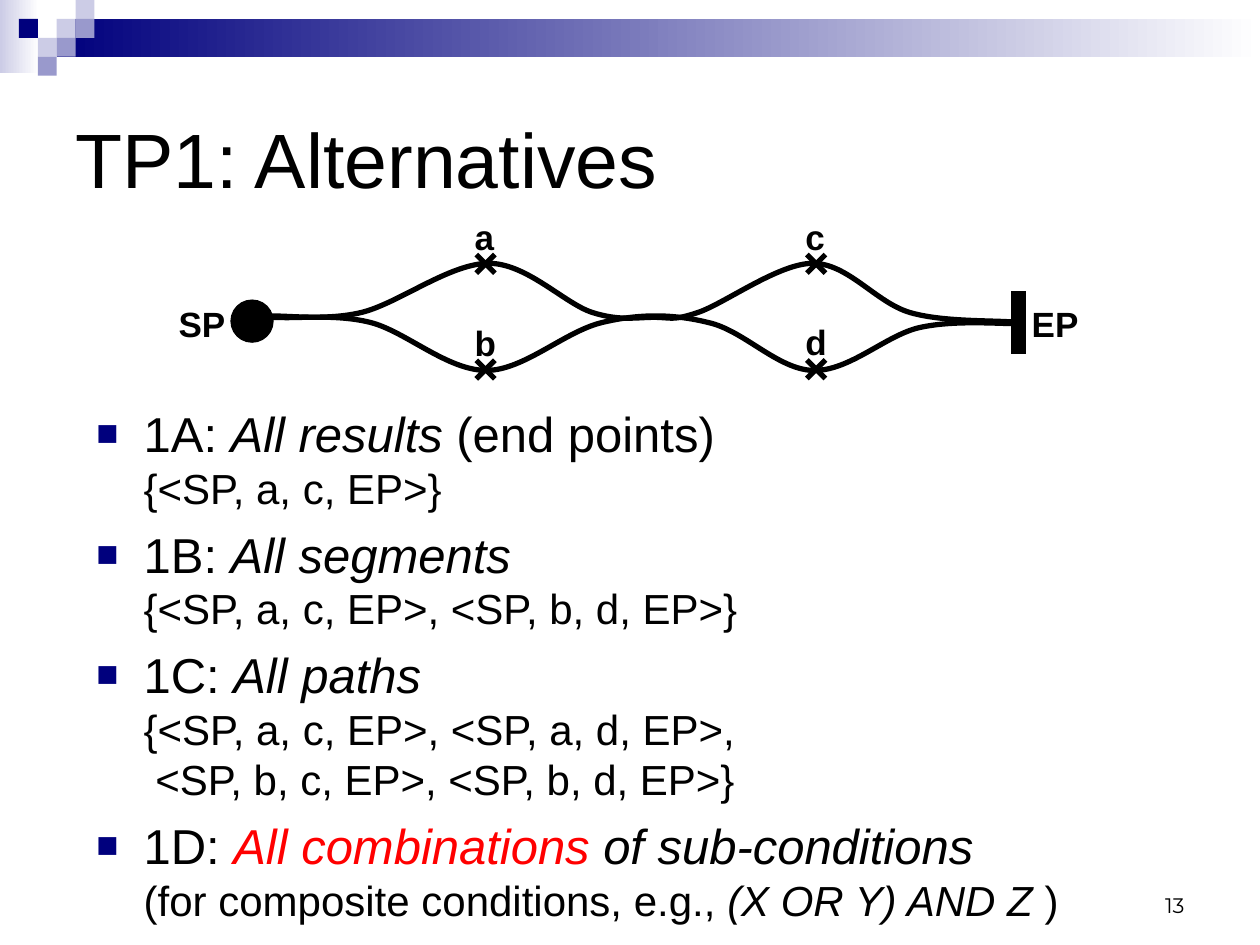
"""Build the slide "TP1: Alternatives" with its path diagram and test criteria."""
from lxml.etree import SubElement
from pptx import Presentation
from pptx.dml.color import RGBColor
from pptx.enum.shapes import MSO_CONNECTOR, MSO_SHAPE
from pptx.enum.text import MSO_ANCHOR, PP_ALIGN
from pptx.oxml.ns import qn
from pptx.util import Pt

BLACK = RGBColor(0x00, 0x00, 0x00)
WHITE = RGBColor(0xFF, 0xFF, 0xFF)
RED = RGBColor(0xFF, 0x00, 0x00)
NAVY = RGBColor(0x00, 0x00, 0x7D)
LILAC = RGBColor(0x99, 0x99, 0xCC)
PALE = RGBColor(0xCC, 0xCC, 0xE6)

TITLE = "TP1: Alternatives"
PAGE_NUMBER = "13"
HEADING, DETAIL = 28, 24
CRITERIA = [
    [[("1A: ", HEADING, False, BLACK), ("All results", HEADING, True, BLACK),
      (" (end points)", HEADING, False, BLACK)],
     [("{<SP, a, c, EP>}", DETAIL, False, BLACK)]],
    [[("1B: ", HEADING, False, BLACK), ("All segments", HEADING, True, BLACK)],
     [("{<SP, a, c, EP>, <SP, b, d, EP>}", DETAIL, False, BLACK)]],
    [[("1C: ", HEADING, False, BLACK), ("All paths", HEADING, True, BLACK)],
     [("{<SP, a, c, EP>, <SP, a, d, EP>, ", DETAIL, False, BLACK)],
     [(" <SP, b, c, EP>, <SP, b, d, EP>}", DETAIL, False, BLACK)]],
    [[("1D: ", HEADING, False, BLACK), ("All combinations ", HEADING, True, RED),
      ("of sub-conditions ", HEADING, True, BLACK)],
     [("(for composite conditions, e.g., ", DETAIL, False, BLACK),
      ("(X OR Y) AND Z", DETAIL, True, BLACK), (" )", DETAIL, False, BLACK)]],
]

CELL = 10.8
BANDS = [(0, 0, 22.3, 41.8, PALE), (3 * CELL, CELL, 687.6, 2 * CELL, NAVY)]
SQUARES = [(3, 1, PALE), (4, 0, PALE), (4, 1, LILAC), (2, 2, PALE),
           (1, 1, NAVY), (3, 2, LILAC), (2, 3, LILAC)]

UPPER_PATH = [
    (153.4, 180.7), (162, 180, ), (185.8, 183.6), (206.6, 178.6),
    (227.5, 173.5), (257, 150.5), (279.4, 150.5),
    (301, 150.5), (322.6, 173.5), (338.4, 178.6),
    (354.2, 183.6), (363.6, 181.4), (373.7, 181.4),
    (383.8, 181.4), (383.8, 183.6), (398.9, 178.6),
    (414, 173.5), (445, 150.5), (464.4, 150.5),
    (484.6, 150.5), (500.4, 172.8), (519.8, 178.6),
    (539.3, 184.3), (568.8, 182.9), (581.8, 184.3)]
LOWER_PATH = [
    (155.5, 181.4), (156.2, 181.4), (149.8, 181.4), (159.1, 181.4),
    (168.5, 182.2), (192.2, 179.3), (211.7, 184.3),
    (231.8, 189.4), (255.6, 211.7), (277.9, 211.7),
    (299.5, 211.7), (322.6, 189.4), (344.2, 184.3),
    (365, 179.3), (384.5, 179.3), (404.6, 184.3),
    (424.8, 188.6), (444.2, 211), (464.4, 211.7),
    (485.3, 212.4), (506.2, 191.5), (525.6, 187.2),
    (545, 182.9), (569.5, 185), (581.8, 185)]

CROSS = 10.6
CONDITIONS = [("a", 277.5, 150.8), ("b", 277.5, 211.2),
              ("c", 466.4, 150.8), ("d", 466.4, 211)]
ENDS = [("SP", 95), ("EP", 582.5)]


def add_box(slide, kind, left, top, width, height):
    box = slide.shapes.add_shape(kind, Pt(left), Pt(top), Pt(width), Pt(height))
    box.shadow.inherit = False
    box.line.fill.background()
    return box


def add_text(slide, text, left, top, width, height, size, font="Arial", wrap=True):
    frame = slide.shapes.add_textbox(Pt(left), Pt(top), Pt(width), Pt(height)).text_frame
    frame.word_wrap = wrap
    paragraph = frame.paragraphs[0]
    paragraph.text = text
    paragraph.font.size = Pt(size)
    paragraph.font.name = font
    paragraph.font.color.rgb = BLACK
    return frame


def add_label(slide, text, left, top, width):
    frame = add_text(slide, text, left, top, width, 31, 20, wrap=False)
    frame.paragraphs[0].font.bold = True


def add_line(slide, x1, y1, x2, y2, weight):
    line = slide.shapes.add_connector(MSO_CONNECTOR.STRAIGHT, Pt(x1), Pt(y1), Pt(x2), Pt(y2))
    line.line.color.rgb = BLACK
    line.line.width = Pt(weight)
    SubElement(line.element.spPr, qn("a:effectLst"))


def add_curve(slide, points):
    start, *controls = [(Pt(x), Pt(y)) for x, y in points]
    builder = slide.shapes.build_freeform(*start)
    builder.add_line_segments(controls, close=False)
    curve = builder.convert_to_shape()
    curve.shadow.inherit = False
    curve.fill.background()
    curve.line.color.rgb = BLACK
    curve.line.width = Pt(3)
    outline = next(curve.element.iter(qn("a:path")))
    segments = outline.findall(qn("a:lnTo"))
    for first in range(0, len(segments), 3):
        bezier = SubElement(outline, qn("a:cubicBezTo"))
        for segment in segments[first:first + 3]:
            bezier.append(segment[0])
            outline.remove(segment)


def add_header(slide):
    for left, top, width, height, color in BANDS:
        fill = add_box(slide, MSO_SHAPE.RECTANGLE, left, top, width, height).fill
        fill.gradient()
        fill.gradient_angle = 0
        for stop, shade in zip(fill.gradient_stops, (color, WHITE)):
            stop.color.rgb = shade
    for column, row, color in SQUARES:
        square = add_box(slide, MSO_SHAPE.RECTANGLE, column * CELL, row * CELL, CELL, CELL)
        square.fill.solid()
        square.fill.fore_color.rgb = color


def add_diagram(slide):
    for points in (UPPER_PATH, LOWER_PATH):
        add_curve(slide, points)
    start = add_box(slide, MSO_SHAPE.OVAL, 132, 171.5, 24, 24)
    start.fill.solid()
    start.fill.fore_color.rgb = BLACK
    start.line.color.rgb = BLACK
    start.line.width = Pt(0.75)
    add_line(slide, 582, 166.5, 582, 202.5, 9)
    for name, left in ENDS:
        add_label(slide, name, left, 169.5, 41)
    half = CROSS / 2
    for name, x, y in CONDITIONS:
        for slope in (1, -1):
            add_line(slide, x - half, y - slope * half, x + half, y + slope * half, 3)
        add_label(slide, name, x - 13.3, y - 31.2, 26)


def add_bullet(paragraph):
    properties = paragraph._p.get_or_add_pPr()
    properties.set("marL", str(Pt(27)))
    properties.set("indent", str(-Pt(27)))
    color = SubElement(properties, qn("a:buClr"))
    SubElement(color, qn("a:srgbClr"), val=str(NAVY))
    SubElement(properties, qn("a:buSzPct"), val="75000")
    SubElement(properties, qn("a:buFont"), typeface="Arial")
    SubElement(properties, qn("a:buChar"), char="■")


def add_criteria(slide):
    frame = slide.shapes.add_textbox(Pt(48), Pt(227), Pt(624), Pt(312)).text_frame
    frame.word_wrap = True
    for index, lines in enumerate(CRITERIA):
        paragraph = frame.add_paragraph() if index else frame.paragraphs[0]
        paragraph.space_before = Pt(6.5)
        add_bullet(paragraph)
        paragraph.font.name = "Arial"
        for number, line in enumerate(lines):
            if number:
                paragraph.add_line_break()
            for text, size, italic, color in line:
                run = paragraph.add_run()
                run.text = text
                run.font.size = Pt(size)
                run.font.italic = italic
                run.font.color.rgb = color


def main():
    deck = Presentation()
    deck.slide_width, deck.slide_height = Pt(720), Pt(540)
    slide = deck.slides.add_slide(deck.slide_layouts[6])
    add_header(slide)
    number = add_text(slide, PAGE_NUMBER, 516, 492, 168, 36, 12, "Montserrat")
    number.vertical_anchor = MSO_ANCHOR.BOTTOM
    number.paragraphs[0].alignment = PP_ALIGN.RIGHT
    title = add_text(slide, TITLE, 36, 36, 648, 108, 44)
    title.vertical_anchor = MSO_ANCHOR.MIDDLE
    add_diagram(slide)
    add_criteria(slide)
    deck.save("out.pptx")


if __name__ == "__main__":
    main()
